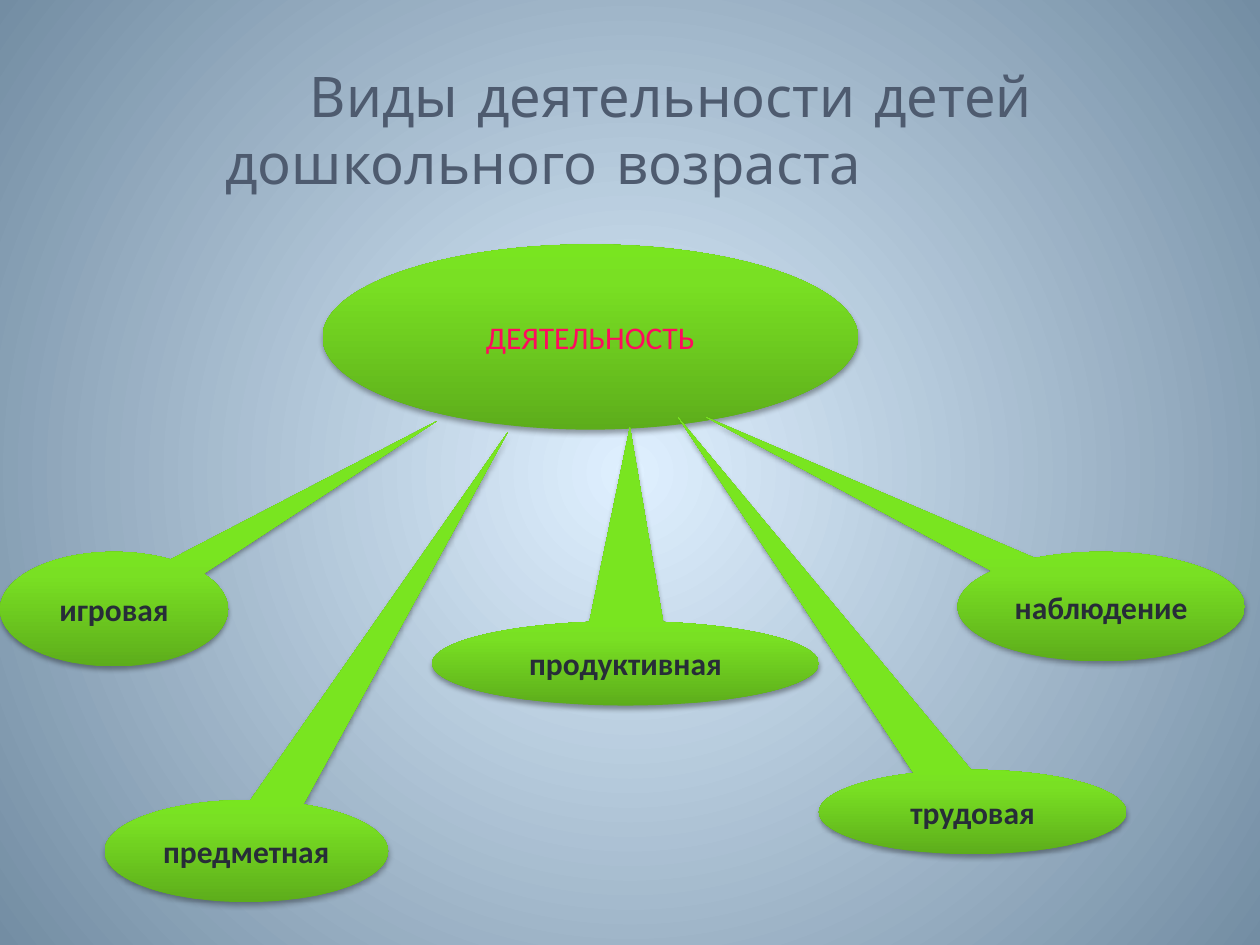
from pptx import Presentation
from pptx.dml.color import RGBColor
from pptx.enum.shapes import MSO_SHAPE
from pptx.enum.text import MSO_ANCHOR, MSO_AUTO_SIZE, PP_ALIGN
from pptx.oxml import parse_xml
from pptx.oxml.ns import nsdecls, qn
from pptx.util import Inches, Pt

ELLIPSE = MSO_SHAPE.OVAL
CALLOUT = MSO_SHAPE.OVAL_CALLOUT
MIDDLE = MSO_ANCHOR.MIDDLE
GROW = MSO_AUTO_SIZE.SHAPE_TO_FIT_TEXT
LEFT, CENTER = PP_ALIGN.LEFT, PP_ALIGN.CENTER

SLATE = RGBColor(0x4E, 0x5B, 0x6F)
DARK = RGBColor(0x27, 0x2D, 0x38)
PINK = RGBColor(0xFF, 0x0A, 0x5E)
BLACK = RGBColor(0, 0, 0)
GREEN_STOPS = [
    (0, RGBColor(0x5D, 0xAD, 0x1B)),
    (80, RGBColor(0x79, 0xE0, 0x23)),
    (100, RGBColor(0x79, 0xE5, 0x20)),
]
SKY_STOPS = [(0, RGBColor(0xDF, 0xF0, 0xFF)), (100, RGBColor(0x73, 0x8D, 0xA3))]
UPWARD = '<a:lin ang="16200000" scaled="0"/>'
RADIAL = (
    '<a:path path="circle">'
    '<a:fillToRect l="50000" t="50000" r="50000" b="50000"/></a:path>'
)

ACTIVITIES = [
    ("игровая", (0, 4.38, 1.81, 0.91), (3.47, 3.34)),
    ("предметная", (0.83, 6.35, 2.25, 0.81), (4.03, 3.43)),
    ("продуктивная", (3.43, 4.93, 3.07, 0.67), (5.0, 3.39)),
    ("трудовая", (6.5, 6.11, 2.44, 0.67), (5.38, 3.31)),
    ("наблюдение", (7.6, 4.38, 2.28, 0.87), (5.6, 3.31)),
]


def set_gradient(fill, owner, stops, direction):
    """Give the owner of a fill a gradient with the stops and direction."""
    fill.solid()
    solid = next(owner.iter(qn("a:solidFill")))
    stop_xml = "".join(
        f'<a:gs pos="{position * 1000}"><a:srgbClr val="{color}"/></a:gs>'
        for position, color in stops
    )
    gradient = parse_xml(
        f'<a:gradFill {nsdecls("a")} rotWithShape="1">'
        f"<a:gsLst>{stop_xml}</a:gsLst>{direction}</a:gradFill>"
    )
    solid.getparent().replace(solid, gradient)


def add_shadow(shape):
    """Put a soft shadow below the shape."""
    shape.shadow.inherit = False
    effects = next(shape.element.iter(qn("a:effectLst")))
    effects.append(parse_xml(
        f'<a:outerShdw {nsdecls("a")} blurRad="{Pt(3.1)}" dist="{Pt(1.8)}" '
        f'dir="5400000" rotWithShape="0"><a:srgbClr val="{BLACK}">'
        '<a:alpha val="35000"/></a:srgbClr></a:outerShdw>'
    ))


def write_text(shape, text, *, color, font="Calibri", size=18, bold=False,
               align=CENTER, indent=0):
    """Write one formatted paragraph into the shape."""
    shape.text_frame.word_wrap = True
    paragraph = shape.text_frame.paragraphs[0]
    paragraph.alignment = align
    if indent:
        properties = paragraph._p.get_or_add_pPr()
        properties.set("marL", "0")
        properties.set("indent", str(Inches(indent)))
    run = paragraph.add_run()
    run.text = text
    run.font.name = font
    run.font.size = Pt(size)
    run.font.bold = bold
    run.font.color.rgb = color


def add_title(slide, text):
    """Add the title with an indented first line."""
    title = slide.shapes.add_textbox(
        Inches(1.69), Inches(0.44), Inches(7.95), Inches(1.18))
    write_text(title, text, color=SLATE, font="Comic Neue", size=32,
               align=LEFT, indent=0.67)
    title.text_frame.auto_size = GROW


def add_bubble(slide, kind, box, text, **text_format):
    """Add a green bubble with centred text."""
    bubble = slide.shapes.add_shape(kind, *map(Inches, box))
    set_gradient(bubble.fill, bubble.element.spPr, GREEN_STOPS, UPWARD)
    bubble.line.fill.background()
    add_shadow(bubble)
    bubble.text_frame.vertical_anchor = MIDDLE
    write_text(bubble, text, **text_format)
    return bubble


def add_activity(slide, text, box, tip):
    """Add a callout bubble whose tail ends at the tip."""
    callout = add_bubble(slide, CALLOUT, box, text, color=DARK, bold=True)
    left, top, width, height = box
    callout.adjustments[0] = (tip[0] - left) / width - 0.5
    callout.adjustments[1] = (tip[1] - top) / height - 0.5


def main():
    """Build the slide and save it."""
    presentation = Presentation()
    presentation.slide_width = Inches(10)
    presentation.slide_height = Inches(7.5)
    slide = presentation.slides.add_slide(presentation.slide_layouts[6])
    set_gradient(slide.background.fill, slide.element, SKY_STOPS, RADIAL)
    add_title(slide, "Виды деятельности детей дошкольного возраста")
    add_bubble(slide, ELLIPSE, (2.56, 1.94, 4.25, 1.47), "ДЕЯТЕЛЬНОСТЬ",
               color=PINK)
    for text, box, tip in ACTIVITIES:
        add_activity(slide, text, box, tip)
    presentation.save("out.pptx")


if __name__ == "__main__":
    main()
